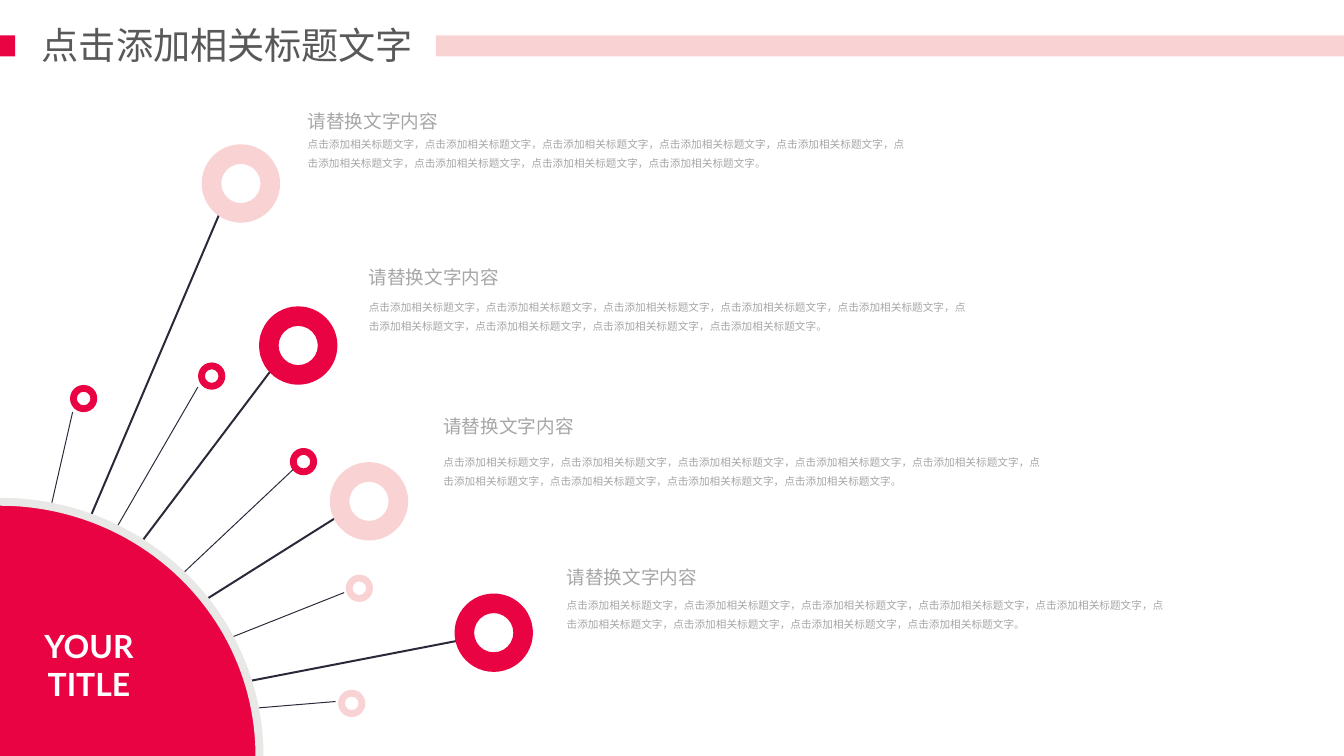
from math import cos, pi, sin

from lxml.etree import SubElement
from pptx import Presentation
from pptx.dml.color import RGBColor
from pptx.enum.shapes import MSO_CONNECTOR, MSO_SHAPE
from pptx.enum.text import PP_ALIGN
from pptx.oxml.ns import qn
from pptx.util import Inches, Pt

# The grid: square cells of a tenth of an inch.
CELL = Inches(0.1)
COLUMNS, ROWS = 140.6, 79.1

RED, PINK, GREY = "EA0343", "F9D3D4", "A6A6A6"
DARK, PALE, WHITE, TITLE_GREY = "2B2939", "E8E8E6", "FFFFFF", "595959"
CHINESE_FONT = "Noto Sans CJK SC"

HUB = (0, 76.3)
LARGE, SMALL = 8.2, 2.85

PHRASE = "点击添加相关标题文字"
HEADING = "请替换文字内容"
BODY = "，".join([PHRASE] * 9) + "。"

# Ring centre, spoke tip, colour, text column, heading row, body row, heading spacing
TOPICS = [
    ((25.2, 19.2), (23.2, 21.8), PINK, 31.2, 10.5, 13.3, 1.2),
    ((31.2, 36.15), (28.7, 38.3), RED, 37.6, 26.9, 30.3, 1.2),
    ((38.6, 52.45), (35.4, 54), PINK, 45.4, 42.9, 46.5, 1),
    ((51.65, 66.2), (48.1, 67), RED, 58.3, 58.3, 61.5, 1.2),
]

# Ring centre, spoke tip, spoke foot, colour
ACCENTS = [
    ((8.75, 41.7), (7.6, 43.1), HUB, RED),
    ((22.15, 39.35), (20.7, 40.5), HUB, RED),
    ((31.75, 48.3), (30.8, 49), (0, 78), RED),
    ((37.6, 61.55), (36, 62), HUB, PINK),
    ((36.8, 73.6), (35.1, 73.4), HUB, PINK),
]


def colour(hex_string):
    return RGBColor.from_string(hex_string)


def cells(*lengths):
    """Turn grid lengths into EMU."""
    return [round(length * CELL) for length in lengths]


class SlideBuilder:
    def __init__(self, slide, font=CHINESE_FONT):
        self.slide = slide
        self.font = font

    def paint(self, shape, fill=None, line=None, weight=0):
        shape.shadow.inherit = False
        if fill:
            shape.fill.solid()
            shape.fill.fore_color.rgb = colour(fill)
        else:
            shape.fill.background()
        if line:
            shape.line.color.rgb = colour(line)
            shape.line.width = Pt(weight)
        else:
            shape.line.fill.background()

    def bar(self, left, top, width, height, fill):
        shape = self.slide.shapes.add_shape(
            MSO_SHAPE.RECTANGLE, *cells(left, top, width, height))
        self.paint(shape, fill)

    def ring(self, centre, size, fill):
        left, top = centre[0] - size / 2, centre[1] - size / 2
        shape = self.slide.shapes.add_shape(
            MSO_SHAPE.DONUT, *cells(left, top, size, size))
        self.paint(shape, fill)

    def spoke(self, tip, foot, weight):
        connector = self.slide.shapes.add_connector(
            MSO_CONNECTOR.STRAIGHT, *cells(*tip, *foot))
        connector.line.color.rgb = colour(DARK)
        connector.line.width = Pt(weight)
        SubElement(connector._element.spPr, qn("a:effectLst"))

    def outline(self, points, closed, **style):
        corners = [cells(*point) for point in points]
        builder = self.slide.shapes.build_freeform(*corners[0], scale=1.0)
        builder.add_line_segments(corners[1:], close=closed)
        self.paint(builder.convert_to_shape(), **style)

    def quarter_disc(self, width, height, fill, edge, weight, steps=90):
        """Draw a quarter ellipse in the bottom left corner, edged on its arc only."""
        angles = [step * pi / 2 / steps for step in range(steps + 1)]
        arc = [(width * sin(angle), ROWS - height * cos(angle)) for angle in angles]
        self.outline(arc + [(0, ROWS)], True, fill=fill)
        self.outline(arc, False, line=edge, weight=weight)

    def text(self, words, left, top, width, height, size, ink, font=None,
             spacing=1, bold=False, align=PP_ALIGN.LEFT, wrap=True):
        box = self.slide.shapes.add_textbox(*cells(left, top, width, height))
        frame = box.text_frame
        frame.word_wrap = wrap
        paragraph = frame.paragraphs[0]
        paragraph.text = words
        paragraph.alignment = align
        paragraph.line_spacing = spacing
        paragraph.font.size = Pt(size)
        paragraph.font.bold = bold
        paragraph.font.color.rgb = colour(ink)
        paragraph.font.name = font or self.font
        properties = paragraph._p.get_or_add_pPr().get_or_add_defRPr()
        SubElement(properties, qn("a:ea"), typeface=self.font)


def main():
    presentation = Presentation()
    presentation.slide_width, presentation.slide_height = cells(COLUMNS, ROWS)
    builder = SlideBuilder(
        presentation.slides.add_slide(presentation.slide_layouts[6]))

    builder.bar(45.6, 3.7, COLUMNS - 45.6, 2.2, PINK)
    builder.bar(0, 3.7, 1.6, 2.2, RED)
    builder.text(PHRASE, 3.4, 1.8, 41.3, 5.7, 28, TITLE_GREY, wrap=False)

    for centre, tip, foot, fill in ACCENTS:
        builder.spoke(tip, foot, 0.75)
        builder.ring(centre, SMALL, fill)

    for centre, tip, fill, left, heading_top, body_top, spacing in TOPICS:
        builder.spoke(tip, HUB, 1.5)
        builder.ring(centre, LARGE, fill)
        builder.text(BODY, left, body_top, 65.1, 5, 8, GREY, spacing=1.5)
        builder.text(HEADING, left, heading_top, 26.6, 3.9, 14, GREY,
                     font="Arial", spacing=spacing)

    builder.quarter_disc(27.15, 26.6, RED, PALE, 6)
    builder.text("YOUR TITLE", 1.2, 65.1, 16.2, 9.1, 24, WHITE, font="Lato",
                 bold=True, align=PP_ALIGN.CENTER)

    presentation.save("out.pptx")


if __name__ == "__main__":
    main()
